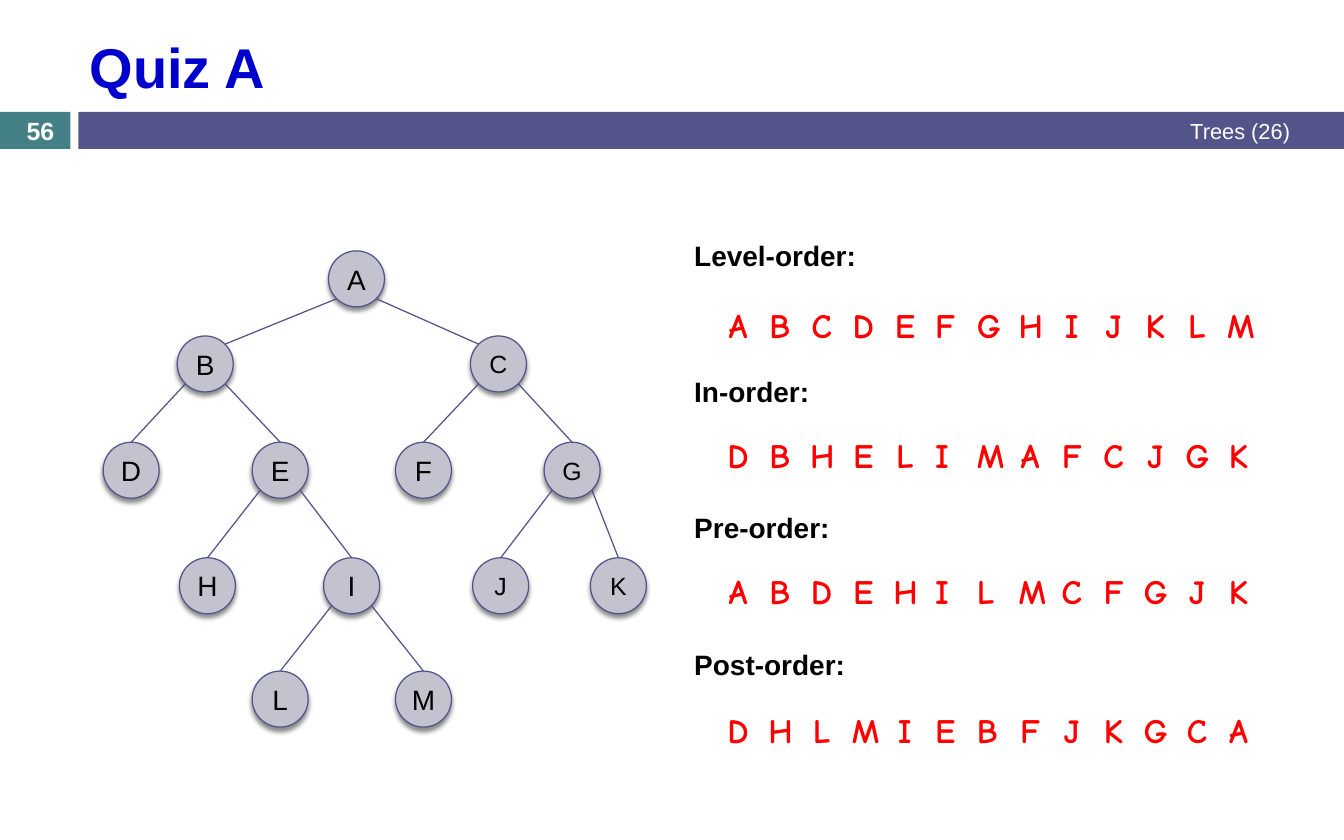
from collections import namedtuple
from dataclasses import dataclass

from lxml import etree
from pptx import Presentation
from pptx.dml.color import RGBColor
from pptx.enum.shapes import MSO_CONNECTOR, MSO_SHAPE
from pptx.enum.text import MSO_ANCHOR, MSO_AUTO_SIZE, PP_ALIGN
from pptx.oxml.ns import qn
from pptx.util import Cm, Pt

RECT, OVAL = MSO_SHAPE.RECTANGLE, MSO_SHAPE.OVAL
STRAIGHT = MSO_CONNECTOR.STRAIGHT
LEFT, CENTER, RIGHT = PP_ALIGN.LEFT, PP_ALIGN.CENTER, PP_ALIGN.RIGHT
TOP, MIDDLE = MSO_ANCHOR.TOP, MSO_ANCHOR.MIDDLE
NO_FIT = MSO_AUTO_SIZE.NONE

Box = namedtuple("Box", "left top width height")
Style = namedtuple("Style", "font size color bold")


@dataclass(frozen=True)
class Theme:
    """Colours, line widths and type styles of the slide."""
    bar: str = "53548A"
    number_tile: str = "438086"
    node: str = "C3C3CF"
    outline_width: float = 0.79
    title: Style = Style("Arial", 36, "0000CC", True)
    section: Style = Style("Arial", 14, "FFFFFF", False)
    number: Style = Style("Arial", 16, "FFFFFF", True)
    label: Style = Style("Arial", 18, "000000", True)
    node_text: Style = Style("Arial", 18, "000000", False)
    node_text_small: Style = Style("Arial", 16, "000000", False)
    answer: Style = Style("Comic Neue", 22, "FF0000", True)


THEME = Theme()

NODE_SIZE = 1.27
LEVEL_TOPS = [0, 1.93, 4.34, 6.96, 9.53]
LEVELS = [
    {"A": 5.11},
    {"B": 1.68, "C": 8.33},
    {"D": 0, "E": 3.38, "F": 6.63, "G": 10},
    {"H": 1.73, "I": 5, "J": 8.38, "K": 11.05},
    {"L": 3.38, "M": 6.63},
]
CHILDREN = {"A": "BC", "B": "DE", "C": "FG", "E": "HI", "G": "JK", "I": "LM"}
SMALL_NODES = "CGJK"

TRAVERSALS = {
    "Level-order:": "ABCDEFGHIJKLM",
    "In-order:": "DBHELIMAFCJGK",
    "Pre-order:": "ABDEHILMCFGJK",
    "Post-order:": "DHLMIEBFJKGCA",
}
ANSWER_TOPS = [1.5, 4.45, 7.54, 10.69]
LEFT_COLUMNS = (5, 6)


def place(sp, box):
    """Move and size a shape to a box given in centimetres."""
    sp.left, sp.top, sp.width, sp.height = (Cm(v) for v in box)


def format_paragraph(p, style, align):
    """Apply alignment and a type style to a paragraph."""
    p.alignment = align
    for r in p.runs:
        r.font.name = style.font
        r.font.size = Pt(style.size)
        r.font.bold = style.bold
        r.font.color.rgb = RGBColor.from_string(style.color)


def write(sp, text, style, align, anchor=MIDDLE):
    """Write one styled line of text into a shape."""
    tf = sp.text_frame
    tf.word_wrap = True
    tf.auto_size = NO_FIT
    tf.vertical_anchor = anchor
    tf.text = text
    format_paragraph(tf.paragraphs[0], style, align)


def add_text(slide, box, text, style, align, anchor=MIDDLE):
    """Add a text box holding one line."""
    sp = slide.shapes.add_textbox(*(Cm(v) for v in box))
    write(sp, text, style, align, anchor)


def add_flat_shape(slide, kind, box, fill):
    """Add a filled shape without outline or shadow."""
    sp = slide.shapes.add_shape(kind, *(Cm(v) for v in box))
    sp.shadow.inherit = False
    sp.fill.solid()
    sp.fill.fore_color.rgb = RGBColor.from_string(fill)
    sp.line.fill.background()
    return sp


def outline(sp):
    """Give a shape or connector the thin outline."""
    sp.line.color.rgb = RGBColor.from_string(THEME.bar)
    sp.line.width = Pt(THEME.outline_width)


def add_shadow(sp):
    """Give a shape a soft shadow straight below it."""
    effects = sp._element.spPr.find(qn("a:effectLst"))
    shadow = etree.SubElement(effects, qn("a:outerShdw"), blurRad="38100",
                              dist="30480", dir="5400000", rotWithShape="0")
    color = etree.SubElement(shadow, qn("a:srgbClr"), val="000000")
    etree.SubElement(color, qn("a:alpha"), val="45000")


def build_header(slide, box, title, section, number):
    """Place the title above the number tile and the section bar."""
    bar_h, bar_left = 0.84, 1.78
    bar_top = box.top + box.height - bar_h
    bar_w = box.width - bar_left
    tile = Box(box.left, bar_top, 1.6, bar_h)
    bar = Box(box.left + bar_left, bar_top, bar_w, bar_h)
    add_flat_shape(slide, RECT, tile, THEME.number_tile)
    add_flat_shape(slide, RECT, bar, THEME.bar)
    sp = slide.shapes.title
    place(sp, Box(bar.left, box.top + 0.48, bar_w - 0.99, 2.03))
    write(sp, title, THEME.title, LEFT)
    add_text(slide, Box(15.67, bar_top, 13.84, bar_h), section,
             THEME.section, RIGHT)
    add_text(slide, tile._replace(width=1.83), number, THEME.number, CENTER)


def add_node(slide, box, name):
    """Add one tree node."""
    sp = add_flat_shape(slide, OVAL, box, THEME.node)
    outline(sp)
    add_shadow(sp)
    tf = sp.text_frame
    tf.margin_left = tf.margin_right = tf.margin_top = tf.margin_bottom = 0
    small = name in SMALL_NODES
    write(sp, name, THEME.node_text_small if small else THEME.node_text, CENTER)


def add_edge(slide, start, end):
    """Add a plain line between two points."""
    s = slide.shapes.add_connector(STRAIGHT, *(Cm(v) for v in start + end))
    outline(s)
    etree.SubElement(s._element.spPr, qn("a:effectLst"))


def build_tree(slide, box):
    """Place the nodes by level and join parents to children."""
    radius = NODE_SIZE / 2
    diagonal = radius * 0.71
    centers = {}
    for top, level in zip(LEVEL_TOPS, LEVELS):
        for name, left in level.items():
            x, y = box.left + left, box.top + top
            add_node(slide, Box(x, y, NODE_SIZE, NODE_SIZE), name)
            centers[name] = (x + radius, y + radius)
    for parent, children in CHILDREN.items():
        px, py = centers[parent]
        for side, child in zip((-1, 1), children):
            cx, cy = centers[child]
            if parent == "A":
                end = (cx - side * diagonal, cy - diagonal)
            else:
                end = (cx, cy - radius)
            add_edge(slide, (px + side * diagonal, py + diagonal), end)


def build_traversals(slide, box):
    """Place the list of orders and a row of answer letters under each."""
    sp = slide.placeholders[1]
    place(sp, box._replace(width=7.82, height=10.26))
    tf = sp.text_frame
    tf.auto_size = NO_FIT
    tf.vertical_anchor = TOP
    tf.text = "\n".join(TRAVERSALS)
    for i, p in enumerate(tf.paragraphs):
        format_paragraph(p, THEME.label, LEFT)
        p.space_before = Pt(66 if i else 0)
        pPr = p._p.get_or_add_pPr()
        pPr.set("marL", "0")
        pPr.set("indent", "0")
        etree.SubElement(pPr, qn("a:buNone"))
    cell_w, cell_h, indent = 1.02, 1.19, 0.74
    pitch = (box.width - indent - cell_w) / 12
    for top, letters in zip(ANSWER_TOPS, TRAVERSALS.values()):
        for col, letter in enumerate(letters):
            cell = Box(box.left + indent + col * pitch, box.top + top,
                       cell_w, cell_h)
            align = LEFT if col in LEFT_COLUMNS else CENTER
            add_text(slide, cell, letter, THEME.answer, align, TOP)


def main():
    """Build the quiz slide and save it."""
    prs = Presentation()
    prs.slide_width, prs.slide_height = Cm(30.48), Cm(19.05)
    slide = prs.slides.add_slide(prs.slide_layouts[1])
    build_header(slide, Box(0, 0, 30.48, 3.38), "Quiz A", "Trees (26)", "56")
    build_tree(slide, Box(2.34, 5.69, 12.32, 10.8))
    build_traversals(slide, Box(15.49, 5.28, 13.11, 11.88))
    prs.save("out.pptx")


if __name__ == "__main__":
    main()
